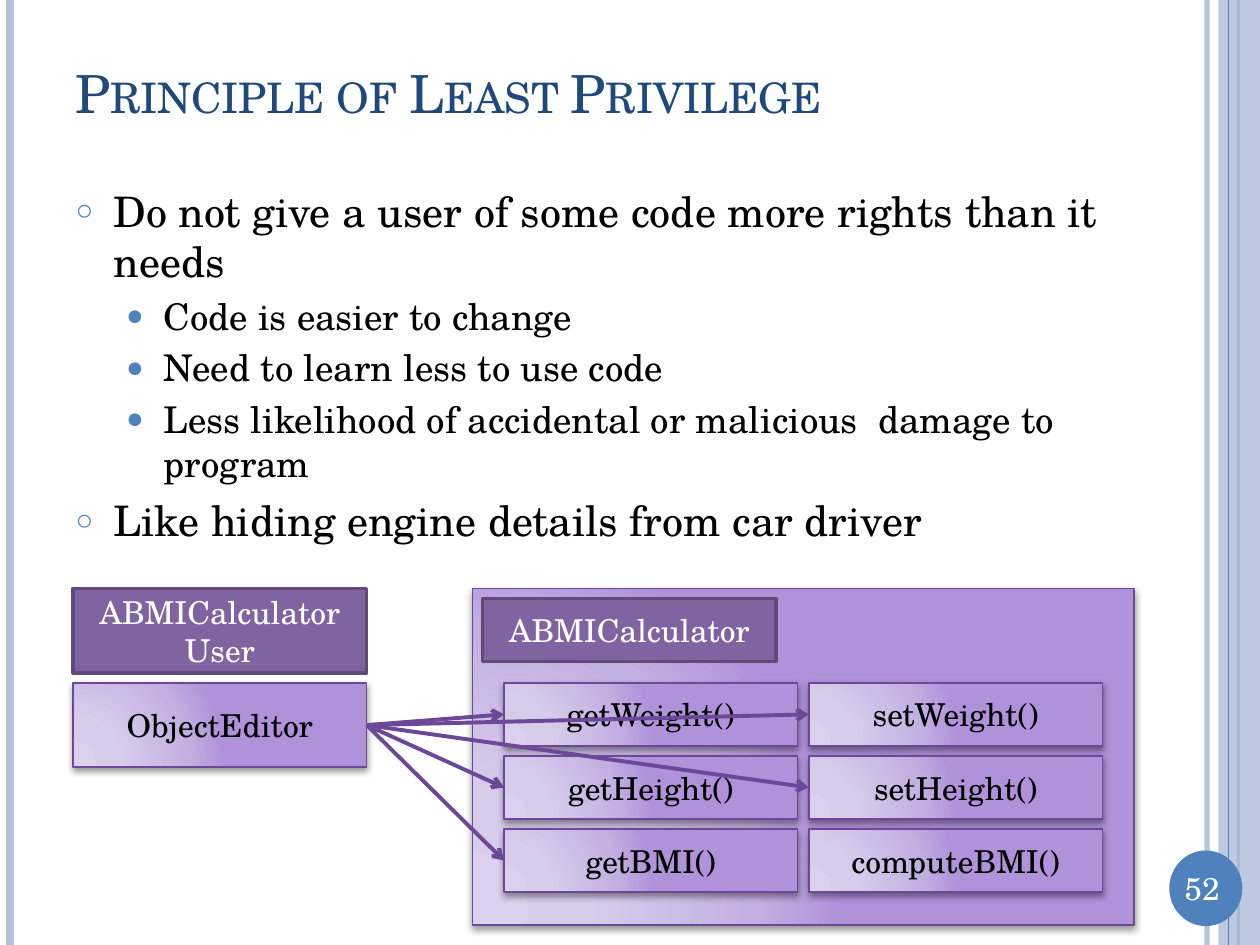
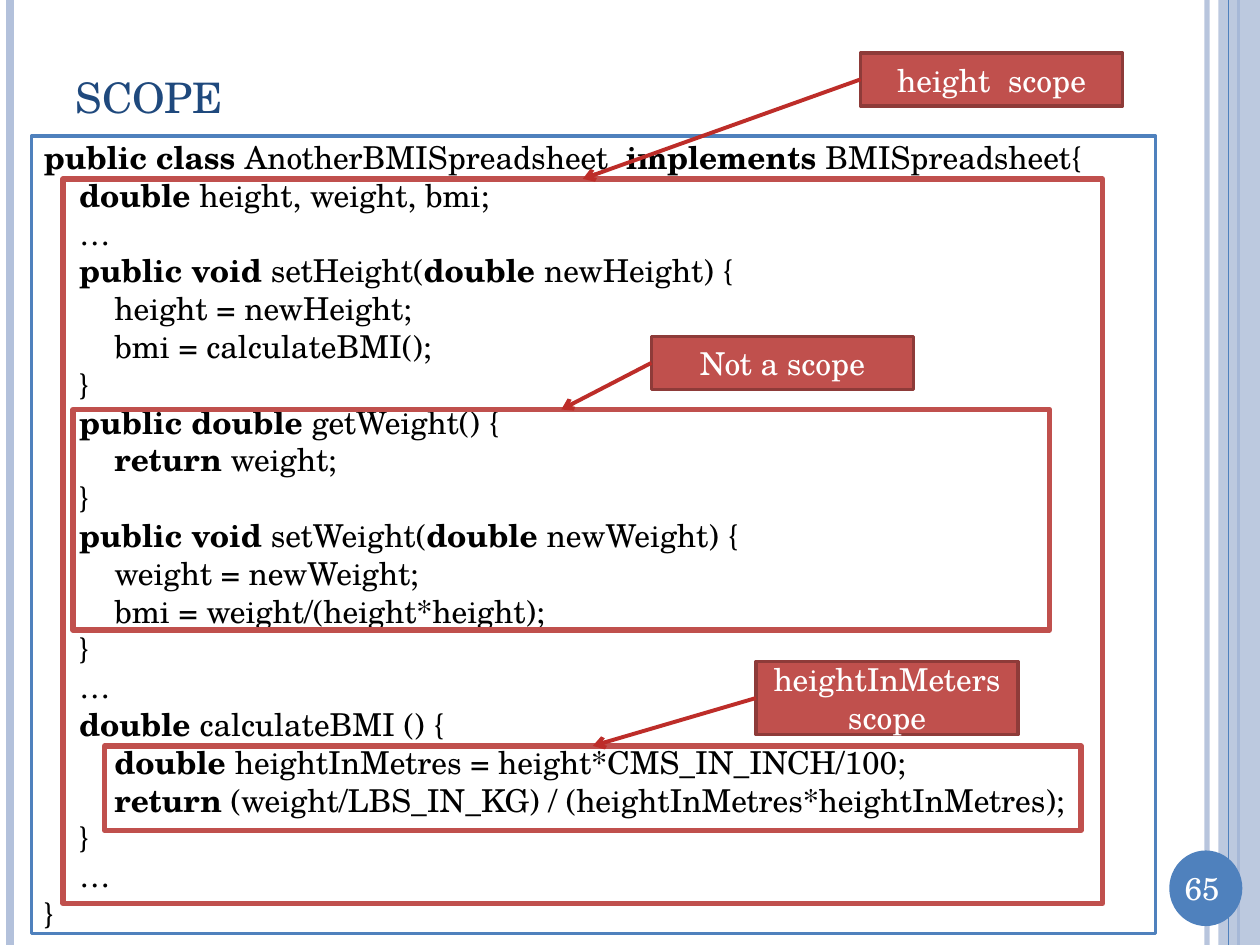
from lxml.etree import SubElement
from pptx import Presentation
from pptx.dml.color import RGBColor
from pptx.enum.shapes import MSO_CONNECTOR as CONNECTOR, MSO_SHAPE as SHAPE
from pptx.enum.text import MSO_ANCHOR as ANCHOR, MSO_AUTO_SIZE as AUTO_SIZE, PP_ALIGN as ALIGN
from pptx.oxml import parse_xml
from pptx.oxml.ns import nsdecls, qn
from pptx.util import Inches, Pt

FONT = "TeX Gyre Schola"
WHITE = RGBColor(0xFF, 0xFF, 0xFF)
BLACK = RGBColor(0x00, 0x00, 0x00)
NAVY = RGBColor(0x1F, 0x49, 0x7D)
BLUE = RGBColor(0x4F, 0x81, 0xBD)
PALE_BLUE = RGBColor(0xB3, 0xC1, 0xDB)
PURPLE = RGBColor(0x80, 0x64, 0xA2)
PURPLE_EDGE = RGBColor(0x5F, 0x4A, 0x78)
PURPLE_LINE = RGBColor(0x6C, 0x48, 0x98)
RED = RGBColor(0xC0, 0x50, 0x4D)
RED_EDGE = RGBColor(0x8E, 0x3B, 0x39)
RED_LINE = RGBColor(0xBD, 0x2D, 0x29)
LILAC_STOPS = [(0, RGBColor(0xDB, 0xD0, 0xED)), (30, RGBColor(0xD8, 0xCC, 0xEB)),
               (75, RGBColor(0xC3, 0xB0, 0xE2)), (100, RGBColor(0xAF, 0x92, 0xDA))]

LEFT_SIDE, RIGHT_SIDE, TOP_SIDE = 1, 3, 0
CODE_INDENT = 0.28

PRINCIPLE_POINTS = [
    (0, "Do not give a user of some code more rights than it needs"),
    (1, "Code is easier to change"),
    (1, "Need to learn less to use code"),
    (1, "Less likelihood of accidental or malicious  damage to program"),
    (0, "Like hiding engine details from car driver"),
]
# Per level: bullet, bullet size %, text size, left margin, space before
BULLET_LEVELS = [("○", 70, 24, 0.3, 6), ("●", 80, 21, 0.7, 4.2)]

METHODS = [("getWeight()", "setWeight()"),
           ("getHeight()", "setHeight()"),
           ("getBMI()", "computeBMI()")]
CALLS = ["getWeight()", "setWeight()", "setHeight()", "getHeight()", "getBMI()"]

# Indent level and text; bars switch bold on and off
CODE_LINES = [
    (0, "|public class |AnotherBMISpreadsheet  |implements |BMISpreadsheet{"),
    (1, "|double| height, weight, bmi;"),
    (1, "…"),
    (1, "|public void |setHeight(|double |newHeight) {"),
    (2, "height = newHeight;"),
    (2, "bmi = calculateBMI();"),
    (1, "}"),
    (1, "|public double |getWeight() {"),
    (2, "|return| weight;"),
    (1, "}"),
    (1, "|public void |setWeight(|double |newWeight) {"),
    (2, "weight = newWeight;"),
    (2, "bmi = weight/(height*height);"),
    (1, "}"),
    (1, "…"),
    (1, "|double |calculateBMI () {"),
    (2, "|double |heightInMetres = height*CMS_IN_INCH/100;"),
    (2, "|return| (weight/LBS_IN_KG) / (heightInMetres*heightInMetres);"),
    (1, "}"),
    (1, "…"),
    (0, "}"),
]

# Label, label box, scope box
SCOPES = [
    ("heightInMeters scope", (6, 5.25, 2.08, 0.58), (0.83, 5.92, 7.75, 0.67)),
    ("Not a scope", (5.17, 2.67, 2.08, 0.42), (0.58, 3.25, 7.75, 1.75)),
    ("height  scope", (6.83, 0.42, 2.08, 0.42), (0.5, 1.42, 8.25, 5.75)),
]


def inches(values):
    return [Inches(value) for value in values]


def add_run(paragraph, text, size=18, color=BLACK, bold=False):
    run = paragraph.add_run()
    run.text = text
    run.font.name = FONT
    run.font.size = Pt(size)
    run.font.bold = bold
    run.font.color.rgb = color
    return run


def set_alpha(shape, percent):
    color = next(shape._element.spPr.iter(qn("a:srgbClr")))
    SubElement(color, qn("a:alpha")).set("val", str(percent * 1000))


def add_box(slide, box, fill=None, line=None, width=2, text="", color=WHITE, kind=SHAPE.RECTANGLE):
    shape = slide.shapes.add_shape(kind, *inches(box))
    shape.shadow.inherit = False
    if fill is None:
        shape.fill.background()
    else:
        shape.fill.solid()
        shape.fill.fore_color.rgb = fill
    if line is None:
        shape.line.fill.background()
    else:
        shape.line.color.rgb = line
        shape.line.width = Pt(width)
    frame = shape.text_frame
    frame.word_wrap = True
    frame.vertical_anchor = ANCHOR.MIDDLE
    if text:
        paragraph = frame.paragraphs[0]
        paragraph.alignment = ALIGN.CENTER
        add_run(paragraph, text, color=color)
    return shape


def add_lilac_box(slide, box, text=""):
    """Box with a radial lilac gradient and a soft shadow below."""
    shape = add_box(slide, box, None, PURPLE_LINE, 1, text, BLACK)
    properties = shape._element.spPr
    stops = "".join(f'<a:gs pos="{position * 1000}"><a:srgbClr val="{color}"/></a:gs>'
                    for position, color in LILAC_STOPS)
    gradient = parse_xml(
        f'<a:gradFill {nsdecls("a")} rotWithShape="1"><a:gsLst>{stops}</a:gsLst>'
        '<a:path path="circle"><a:fillToRect l="5000" t="100000" r="120000" b="10000"/>'
        '</a:path></a:gradFill>')
    properties.replace(properties.find(qn("a:noFill")), gradient)
    properties.find(qn("a:effectLst")).append(parse_xml(
        f'<a:outerShdw {nsdecls("a")} blurRad="{Pt(4)}" dist="{Pt(2)}" dir="5400000" '
        'rotWithShape="0"><a:srgbClr val="000000"><a:alpha val="40000"/></a:srgbClr>'
        '</a:outerShdw>'))
    return shape


def add_line(slide, color, width, start=(0, 0), end=(0, 0)):
    line = slide.shapes.add_connector(CONNECTOR.STRAIGHT, *inches(start + end))
    line.line.color.rgb = color
    line.line.width = Pt(width)
    SubElement(line._element.spPr, qn("a:effectLst"))
    return line


def add_arrow(slide, source, source_side, target, target_side, color):
    arrow = add_line(slide, color, 2.25)
    arrow.begin_connect(source, source_side)
    arrow.end_connect(target, target_side)
    outline = arrow._element.spPr.find(qn("a:ln"))
    SubElement(outline, qn("a:tailEnd")).set("type", "arrow")


def add_side_bands(slide):
    def vertical(x, color, width):
        return add_line(slide, color, width, (x, 0), (x, 7.5))

    set_alpha(vertical(9.58, PALE_BLUE, 3), 93)
    vertical(0.08, PALE_BLUE, 4.5)
    vertical(9.83, BLUE, 1.5)
    set_alpha(add_box(slide, (9.67, 0, 0.33, 7.5), PALE_BLUE), 87)
    vertical(9.75, BLUE, 0.75)


def add_page_number(slide, number):
    add_box(slide, (9.28, 6.75, 0.58, 0.6), BLUE, kind=SHAPE.OVAL)
    frame = slide.shapes.add_textbox(*inches((9.25, 6.85, 0.58, 0.4))).text_frame
    frame.word_wrap = True
    paragraph = frame.paragraphs[0]
    paragraph.alignment = ALIGN.CENTER
    add_run(paragraph, str(number), color=WHITE)


def place(placeholder, box):
    placeholder.left, placeholder.top, placeholder.width, placeholder.height = inches(box)
    placeholder.text_frame.auto_size = AUTO_SIZE.NONE
    return placeholder.text_frame


def start_slide(presentation, layout_index, title, number):
    slide = presentation.slides.add_slide(presentation.slide_layouts[layout_index])
    add_side_bands(slide)
    add_page_number(slide, number)
    frame = place(slide.shapes.title, (0.5, 0.3, 8.67, 0.87))
    frame.vertical_anchor = ANCHOR.MIDDLE
    paragraph = frame.paragraphs[0]
    paragraph.alignment = ALIGN.LEFT
    run = add_run(paragraph, title, 30, NAVY)
    run.font._element.set("cap", "small")
    return slide


def set_indent(paragraph, margin, first_line=0):
    properties = paragraph._p.get_or_add_pPr()
    properties.set("marL", str(Inches(margin)))
    properties.set("indent", str(Inches(first_line)))
    return properties


def next_paragraph(frame, index):
    return frame.paragraphs[0] if index == 0 else frame.add_paragraph()


def fill_bullets(frame, points):
    for index, (level, text) in enumerate(points):
        bullet, percent, size, margin, space = BULLET_LEVELS[level]
        paragraph = next_paragraph(frame, index)
        paragraph.level = level
        paragraph.space_before = Pt(space)
        properties = set_indent(paragraph, margin, -0.3)
        color = SubElement(properties, qn("a:buClr"))
        SubElement(color, qn("a:srgbClr")).set("val", str(BLUE))
        SubElement(properties, qn("a:buSzPct")).set("val", str(percent * 1000))
        SubElement(properties, qn("a:buChar")).set("char", bullet)
        add_run(paragraph, text, size)


def fill_code(frame, lines):
    for index, (level, text) in enumerate(lines):
        paragraph = next_paragraph(frame, index)
        paragraph.alignment = ALIGN.LEFT
        set_indent(paragraph, level * CODE_INDENT)
        for part, piece in enumerate(text.split("|")):
            if piece:
                add_run(paragraph, piece, bold=part % 2 == 1)


def build_privilege_slide(presentation):
    slide = start_slide(presentation, 1, "Principle of Least Privilege", 52)
    fill_bullets(place(slide.placeholders[1], (0.5, 1.42, 8.67, 3.08)), PRINCIPLE_POINTS)

    editor = add_lilac_box(slide, (0.58, 5.42, 2.33, 0.67), "ObjectEditor")
    add_lilac_box(slide, (3.75, 4.67, 5.25, 2.67))
    add_box(slide, (0.58, 4.67, 2.33, 0.67), PURPLE, PURPLE_EDGE, text="ABMICalculator User")
    add_box(slide, (3.83, 4.75, 2.33, 0.5), PURPLE, PURPLE_EDGE, text="ABMICalculator")

    method_boxes = {}
    for row, names in enumerate(METHODS):
        for column, name in enumerate(names):
            box = (4 + column * 2.42, 5.42 + row * 0.58, 2.33, 0.5)
            method_boxes[name] = add_lilac_box(slide, box, name)
    for name in CALLS:
        add_arrow(slide, editor, RIGHT_SIDE, method_boxes[name], LEFT_SIDE, PURPLE_LINE)


def build_scope_slide(presentation):
    slide = start_slide(presentation, 5, "scope", 65)
    code_box = add_box(slide, (0.25, 1.08, 8.92, 6.33), WHITE, BLUE)
    fill_code(code_box.text_frame, CODE_LINES)
    for label, label_box, scope_box in SCOPES:
        scope = add_box(slide, scope_box, line=RED, width=3)
        callout = add_box(slide, label_box, RED, RED_EDGE, text=label)
        add_arrow(slide, callout, LEFT_SIDE, scope, TOP_SIDE, RED_LINE)


def main():
    presentation = Presentation()
    presentation.slide_width = Inches(10)
    presentation.slide_height = Inches(7.5)
    build_privilege_slide(presentation)
    build_scope_slide(presentation)
    presentation.save("out.pptx")


if __name__ == "__main__":
    main()
